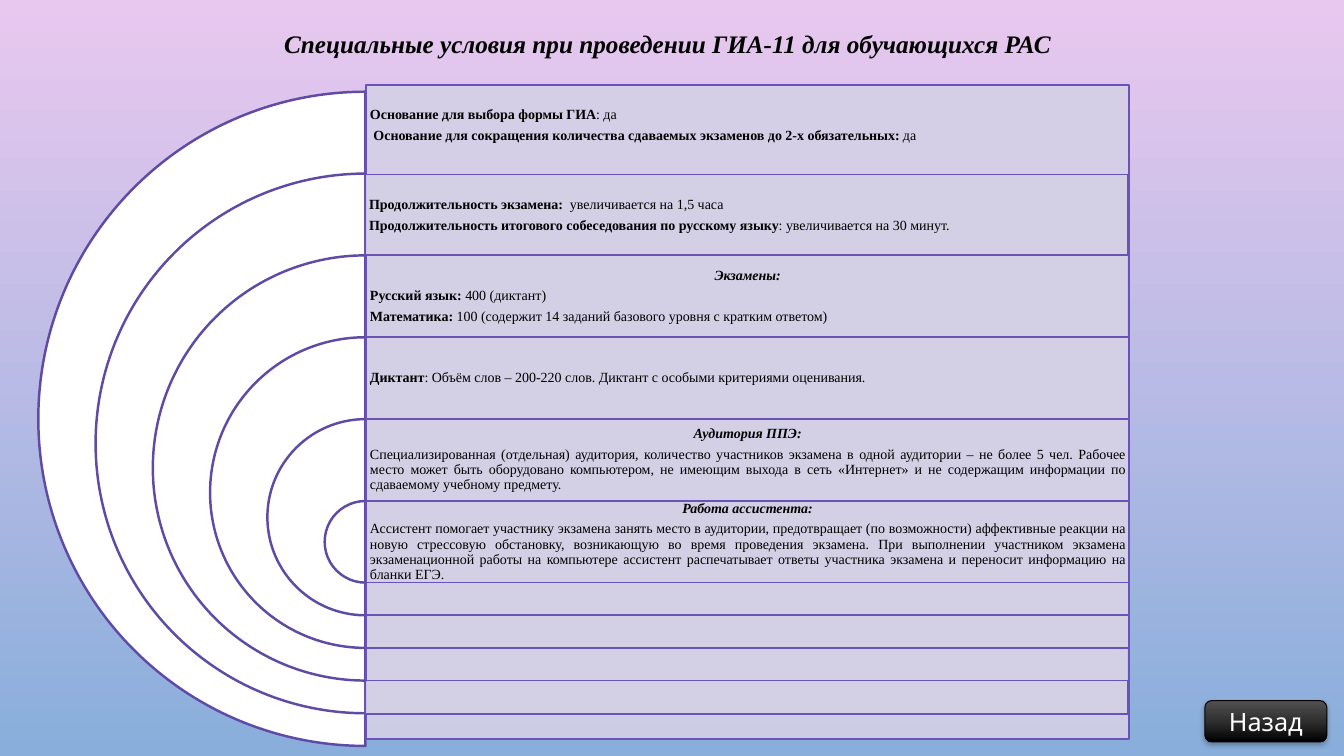
from copy import deepcopy
from lxml import etree
from pptx import Presentation
from pptx.dml.color import RGBColor as RGB
from pptx.enum.shapes import MSO_SHAPE as Form
from pptx.enum.text import MSO_ANCHOR as Anchor, MSO_AUTO_SIZE as Auto, PP_ALIGN as Align
from pptx.oxml import parse_xml
from pptx.oxml.ns import nsdecls, qn
from pptx.util import Inches, Pt

SERIF = "Times New Roman"
JUST, MID, LEFT = Align.JUSTIFY, Align.CENTER, Align.LEFT

# Each ring: its paragraphs as (alignment, [(text, style)]), b = bold, i = italic
RINGS = [
    [(JUST, [("Основание для выбора формы ГИА", "b"), (": да", "")]),
     (JUST, [(" Основание для сокращения количества сдаваемых экзаменов "
              "до 2-х обязательных: ", "b"), ("да", "")])],
    [(JUST, [("Продолжительность экзамена:  ", "b"), ("увеличивается на 1,5 часа", "")]),
     (JUST, [("Продолжительность итогового собеседования по русскому языку", "b"),
             (": увеличивается на 30 минут.", "")])],
    [(MID, [("Экзамены:", "bi")]),
     (JUST, [("Русский язык: ", "b"), ("400 (диктант)", "")]),
     (LEFT, [("Математика: ", "b"),
             ("100 (содержит 14 заданий базового уровня с кратким ответом)", "")])],
    [(JUST, [("Диктант", "b"),
             (": Объём слов – 200-220 слов. Диктант с особыми критериями оценивания.", "")])],
    [(MID, [("Аудитория ППЭ:", "bi")]),
     (JUST, [("Специализированная (отдельная) аудитория, количество участников экзамена "
              "в одной аудитории – не более 5 чел. Рабочее место может быть оборудовано "
              "компьютером, не имеющим выхода в сеть «Интернет» и не содержащим информации "
              "по сдаваемому учебному предмету.", "")])],
    [(MID, [("Работа ассистента:", "bi")]),
     (JUST, [("Ассистент помогает участнику экзамена занять место в аудитории, предотвращает "
              "(по возможности) аффективные реакции на новую стрессовую обстановку, возникающую "
              "во время проведения экзамена. При выполнении участником экзамена экзаменационной "
              "работы на компьютере ассистент распечатывает ответы участника экзамена и "
              "переносит информацию на бланки ЕГЭ.", "")])],
]


def tint(color, code):
    color.rgb = RGB.from_string(code)


def blend(fill, first, last):
    """Vertical gradient from top to bottom."""
    fill.gradient()
    fill.gradient_angle = 270
    for stop, code in zip(fill.gradient_stops, (first, last)):
        tint(stop.color, code)


def style(run, size, code, font=SERIF, marks=""):
    run.font.size = Pt(size)
    run.font.name = font
    run.font.bold = "b" in marks
    run.font.italic = "i" in marks
    tint(run.font.color, code)


def add_form(slide, form, box, line, width):
    shape = slide.shapes.add_shape(form, *map(Inches, box))
    shape.shadow.inherit = False
    tint(shape.line.color, line)
    shape.line.width = Pt(width)
    return shape


def add_pie(slide, box):
    pie = add_form(slide, Form.PIE, box, "5F4BA6", 1.75)
    pie.adjustments[0], pie.adjustments[1] = 54, 162
    pie.fill.solid()
    tint(pie.fill.fore_color, "FFFFFF")


def add_panel(slide, box):
    panel = add_form(slide, Form.RECTANGLE, box, "6953B7", 1.25)
    panel.fill.solid()
    tint(panel.fill.fore_color, "D4D1E6")
    solid = panel._element.spPr.find(qn("a:solidFill"))
    etree.SubElement(solid[0], qn("a:alpha"), val="90000")


def add_notes(slide, box, paras):
    frame = slide.shapes.add_textbox(*map(Inches, box)).text_frame
    frame.word_wrap = True
    frame.vertical_anchor = Anchor.MIDDLE
    frame.margin_left = frame.margin_right = Inches(0.04)
    frame.margin_top = frame.margin_bottom = Inches(0.04)
    for n, (align, parts) in enumerate(paras):
        para = frame.add_paragraph() if n else frame.paragraphs[0]
        para.alignment = align
        para.line_spacing = 0.9
        para.space_after = Pt(4)
        for text, marks in parts:
            run = para.add_run()
            run.text = text
            style(run, 10, "000000", marks=marks)


def add_title(slide, text):
    frame = slide.shapes.add_textbox(
        Inches(2.72), Inches(0.08), Inches(7.93), Inches(0.56)).text_frame
    frame.word_wrap = True
    frame.auto_size = Auto.SHAPE_TO_FIT_TEXT
    frame.text = text
    para = frame.paragraphs[0]
    para.alignment = JUST
    para.line_spacing = 1.5
    style(para.runs[0], 18, "000000", marks="bi")


def add_button(slide, text):
    button = add_form(slide, Form.ROUNDED_RECTANGLE, (11.95, 6.95, 1.21, 0.41), "000000", 0.75)
    blend(button.fill, "515151", "000000")
    props = button._element.spPr
    # Middle gradient stop
    stops = props.find(qn("a:gradFill")).find(qn("a:gsLst"))
    middle = deepcopy(stops[0])
    middle.set("pos", "50000")
    middle[0].set("val", "2F2F2F")
    stops.insert(1, middle)
    # Soft shadow below
    props.find(qn("a:effectLst")).append(parse_xml(
        f'<a:outerShdw {nsdecls("a")} blurRad="{Pt(4)}" dist="{Pt(2)}" dir="5400000" '
        'rotWithShape="0"><a:srgbClr val="000000"><a:alpha val="28000"/></a:srgbClr>'
        '</a:outerShdw>'))
    frame = button.text_frame
    frame.vertical_anchor = Anchor.MIDDLE
    frame.text = text
    frame.paragraphs[0].alignment = MID
    style(frame.paragraphs[0].runs[0], 18, "FFFFFF", "Cabin")


def main():
    deck = Presentation()
    deck.slide_width, deck.slide_height = Inches(13.33), Inches(7.5)
    slide = deck.slides.add_slide(deck.slide_layouts[6])
    blend(slide.background.fill, "E9C8EF", "89AEDB")
    add_title(slide, "Специальные условия при проведении ГИА-11 для обучающихся РАС")

    # Nested half rings with a panel each; the first two panels sit slightly off
    row, step, wide = 0.81, 1.136, 7.57
    shifts = {0: (0, -0.07), 1: (-0.01, 0.01)}
    for n, paras in enumerate(RINGS):
        size = 6.49 - step * n
        top = 0.91 + 0.812 * n
        add_pie(slide, (0.38 + step / 2 * n, top, size, size))
        right, down = shifts.get(n, (0, 0))
        left, top = 3.63 + right, top + down
        add_panel(slide, (left, top, wide, size))
        add_notes(slide, (left, top, wide, row), paras)

    add_button(slide, "Назад")
    deck.save("out.pptx")


if __name__ == "__main__":
    main()
